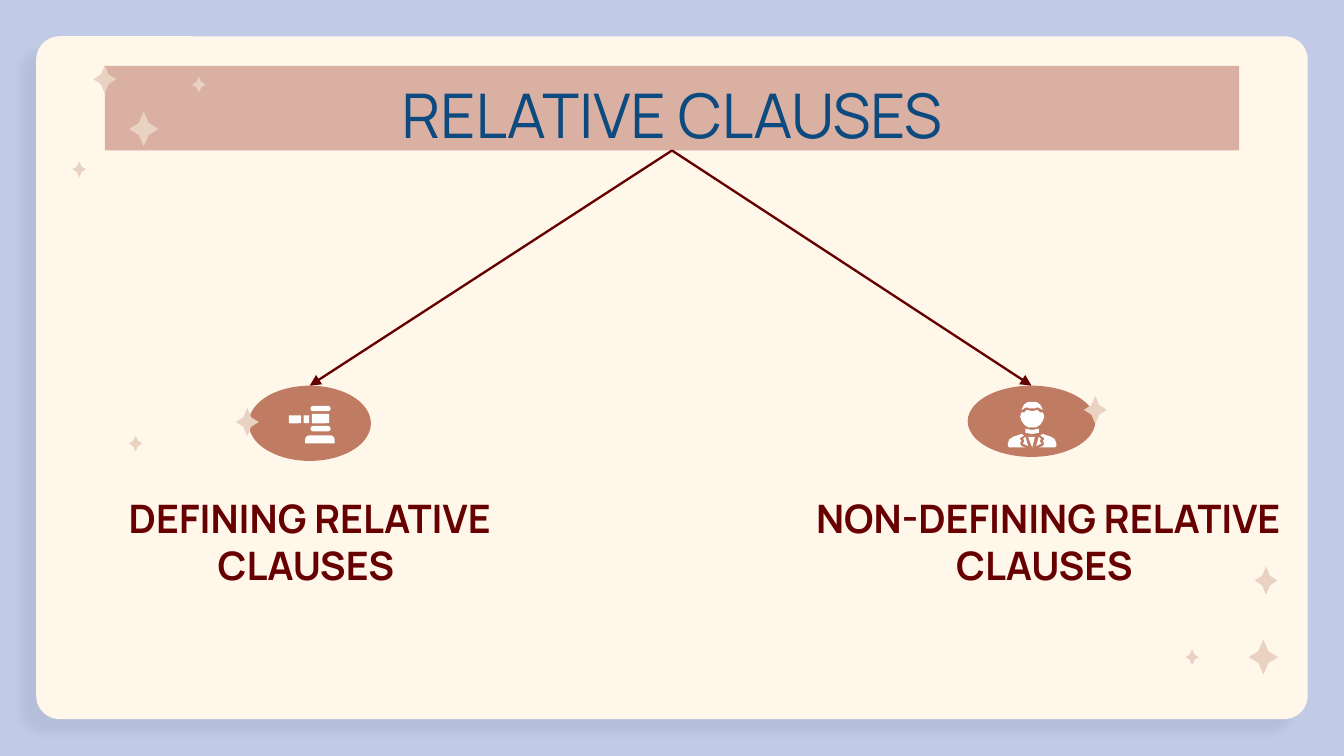
from dataclasses import dataclass
from typing import NamedTuple

from lxml.etree import SubElement
from pptx import Presentation
from pptx.dml.color import RGBColor
from pptx.enum.shapes import MSO_CONNECTOR, MSO_SHAPE
from pptx.enum.text import MSO_ANCHOR, MSO_AUTO_SIZE, PP_ALIGN
from pptx.oxml.ns import qn
from pptx.util import Inches, Pt


@dataclass(frozen=True)
class Theme:
    background: str = "C2CBE6"
    card: str = "FFF7EA"
    shadow: str = "515B7A"
    bar: str = "D9B0A1"
    title: str = "0D4A80"
    label: str = "670001"
    arrow: str = "650001"
    oval: str = "BF7C63"
    icon: str = "FFFFFF"
    star: str = "EAD2C3"
    font: str = "Manrope"
    title_size: float = 33
    label_size: float = 21
    arrow_width: float = 1.25


class Box(NamedTuple):
    x: float
    y: float
    w: float
    h: float


class Star(NamedTuple):
    x: float  # centre
    y: float
    size: str


class Part(NamedTuple):
    shape: MSO_SHAPE
    box: Box
    adjustments: tuple


class Branch(NamedTuple):
    text: str
    label: Box
    oval: Box


THEME = Theme()
CARD = Box(0.27, 0.27, 9.46, 5.08)
TITLE = Box(0.78, 0.49, 8.44, 0.63)
BRANCHES = [
    Branch("DEFINING RELATIVE CLAUSES ", Box(0.76, 4.01, 3.09, 0.37), Box(1.85, 2.87, 0.91, 0.56)),
    Branch("NON-DEFINING RELATIVE CLAUSES ", Box(5.86, 4.01, 3.88, 0.37), Box(7.2, 2.87, 0.95, 0.53)),
]

# Gavel: handle, ferrule, sounding block, then the three parts of the head
GAVEL = [
    Part(MSO_SHAPE.ROUND_2_SAME_RECTANGLE, Box(2.15, 3.09, 0.09, 0.06), (0.1, 0.1)),
    Part(MSO_SHAPE.RECTANGLE, Box(2.26, 3.09, 0.04, 0.06), ()),
    Part(MSO_SHAPE.ROUND_2_SAME_RECTANGLE, Box(2.27, 3.24, 0.22, 0.06), (0.5, 0.1)),
    Part(MSO_SHAPE.ROUNDED_RECTANGLE, Box(2.31, 3.02, 0.15, 0.04), (0.5,)),
    Part(MSO_SHAPE.ROUNDED_RECTANGLE, Box(2.32, 3.08, 0.13, 0.07), (0.12,)),
    Part(MSO_SHAPE.ROUNDED_RECTANGLE, Box(2.31, 3.17, 0.15, 0.04), (0.5,)),
]

# Person: the left half of each outline, mirrored about the centre line
PERSON_AXIS = 7.68
HAIR = [(7.68, 2.99), (7.65, 2.99), (7.62, 3.01), (7.6, 3.05), (7.62, 3.04), (7.64, 3.03), (7.66, 3.04), (7.68, 3.04)]
FACE = [(7.68, 3.06), (7.64, 3.05), (7.62, 3.07), (7.6, 3.07), (7.59, 3.1), (7.6, 3.13), (7.62, 3.16), (7.65, 3.18), (7.68, 3.18)]
NECK = [(7.68, 3.2), (7.63, 3.19), (7.63, 3.22), (7.68, 3.23)]
COAT = [(7.6, 3.23), (7.54, 3.25), (7.51, 3.27), (7.5, 3.3), (7.5, 3.32), (7.51, 3.33), (7.63, 3.33),
        (7.6, 3.32), (7.59, 3.3), (7.6, 3.28), (7.59, 3.27), (7.59, 3.26), (7.62, 3.24)]
LAPEL = [(7.63, 3.25), (7.61, 3.27), (7.62, 3.27), (7.62, 3.29), (7.61, 3.3), (7.65, 3.32)]
SHIRT = [(7.65, 3.25), (7.68, 3.33), (7.7, 3.25)]

STAR_SIZES = {"S": (0.1, 0.12), "M": (0.17, 0.21), "L": (0.22, 0.26)}
STAR_TIPS = [(0, -0.5), (0.5, 0), (0, 0.5), (-0.5, 0)]
STAR_NOTCHES = [(0.17, -0.17), (0.17, 0.17), (-0.17, 0.17), (-0.17, -0.17)]
STARS = [
    Star(8.87, 4.89, "S"), Star(0.78, 0.59, "M"), Star(9.4, 4.89, "L"), Star(9.42, 4.32, "M"),
    Star(1.07, 0.96, "L"), Star(1.48, 0.63, "S"), Star(0.59, 1.26, "S"), Star(1.84, 3.14, "M"),
    Star(1.01, 3.3, "S"), Star(8.15, 3.05, "M"),
]


def rgb(color: str) -> RGBColor:
    return RGBColor.from_string(color)


def paint(sp, color: str):
    sp.shadow.inherit = False
    sp.fill.solid()
    sp.fill.fore_color.rgb = rgb(color)
    sp.line.fill.background()
    return sp


def add_preset(shapes, shape: MSO_SHAPE, box: Box, color: str, adjustments: tuple = ()):
    sp = shapes.add_shape(shape, *map(Inches, box))
    for i, value in enumerate(adjustments):
        sp.adjustments[i] = value
    return paint(sp, color)


def add_outline(shapes, points: list, color: str):
    start, *rest = [(Inches(x), Inches(y)) for x, y in points]
    builder = shapes.build_freeform(*start)
    builder.add_line_segments(rest)
    return paint(builder.convert_to_shape(), color)


def mirror(points: list) -> list:
    return [(2 * PERSON_AXIS - x, y) for x, y in reversed(points)]


def write(sp, text: str, size: float, color: str, bold: bool, after: float = 0) -> None:
    tf = sp.text_frame
    frame_format = dict(word_wrap=True, auto_size=MSO_AUTO_SIZE.NONE, vertical_anchor=MSO_ANCHOR.BOTTOM,
                        margin_left=0, margin_top=0, margin_right=0, margin_bottom=0)
    p = tf.paragraphs[0]
    p.alignment, p.space_after = PP_ALIGN.CENTER, Pt(after)
    r = p.add_run()
    r.text = text
    r.font.color.rgb = rgb(color)
    for target, values in ((tf, frame_format), (r.font, dict(name=THEME.font, size=Pt(size), bold=bold))):
        for name, value in values.items():
            setattr(target, name, value)


def add_card_shadow(card) -> None:
    effects = card._element.spPr.find(qn("a:effectLst"))
    shadow = SubElement(effects, qn("a:outerShdw"), blurRad=str(Pt(4.5)), dist=str(Pt(10.5)),
                        dir=str(137 * 60000), algn="bl", rotWithShape="0")
    color = SubElement(shadow, qn("a:srgbClr"), val=THEME.shadow)
    SubElement(color, qn("a:alpha"), val="10000")


def add_arrow(shapes, source, target) -> None:
    cx = shapes.add_connector(MSO_CONNECTOR.STRAIGHT, 0, 0, 0, 0)
    cx.begin_connect(source, 2)
    cx.end_connect(target, 0)
    cx.line.color.rgb = rgb(THEME.arrow)
    cx.line.width = Pt(THEME.arrow_width)
    SubElement(cx.line._get_or_add_ln(), qn("a:tailEnd"), type="triangle")
    SubElement(cx._element.spPr, qn("a:effectLst"))


def add_label(shapes, branch: Branch) -> None:
    sp = shapes.add_textbox(*map(Inches, branch.label))
    write(sp, branch.text, THEME.label_size, THEME.label, True, 12)


def main() -> None:
    prs = Presentation()
    prs.slide_width = Inches(10)
    prs.slide_height = prs.slide_width * 9 // 16
    slide = prs.slides.add_slide(prs.slide_layouts[5])
    shapes = slide.shapes
    slide.background.fill.solid()
    slide.background.fill.fore_color.rgb = rgb(THEME.background)

    # Title bar, with the card behind it
    title = shapes.title
    title.left, title.top, title.width, title.height = map(Inches, TITLE)
    title.fill.solid()
    title.fill.fore_color.rgb = rgb(THEME.bar)
    write(title, "RELATIVE CLAUSES", THEME.title_size, THEME.title, False)
    card = add_preset(shapes, MSO_SHAPE.ROUNDED_RECTANGLE, CARD, THEME.card, (0.034,))
    add_card_shadow(card)
    title._element.addprevious(card._element)

    # Branch labels and ovals
    for branch in BRANCHES:
        add_label(shapes, branch)
    ovals = [add_preset(shapes, MSO_SHAPE.OVAL, branch.oval, THEME.oval) for branch in BRANCHES]

    # Icons
    gavel = shapes.add_group_shape().shapes
    for part in GAVEL:
        add_preset(gavel, part.shape, part.box, THEME.icon, part.adjustments)
    person = shapes.add_group_shape().shapes
    for half in (HAIR, FACE, NECK):
        add_outline(person, half + mirror(half)[1:-1], THEME.icon)
    for side in (COAT, LAPEL):
        add_outline(person, side, THEME.icon)
        add_outline(person, mirror(side), THEME.icon)
    add_outline(person, SHIRT, THEME.icon)

    # Sparkles
    for star in STARS:
        w, h = STAR_SIZES[star.size]
        corners = [point for pair in zip(STAR_TIPS, STAR_NOTCHES) for point in pair]
        add_outline(shapes, [(star.x + dx * w, star.y + dy * h) for dx, dy in corners], THEME.star)

    # Arrows from the title to each branch
    for oval in ovals:
        add_arrow(shapes, title, oval)

    prs.save("out.pptx")


if __name__ == "__main__":
    main()
